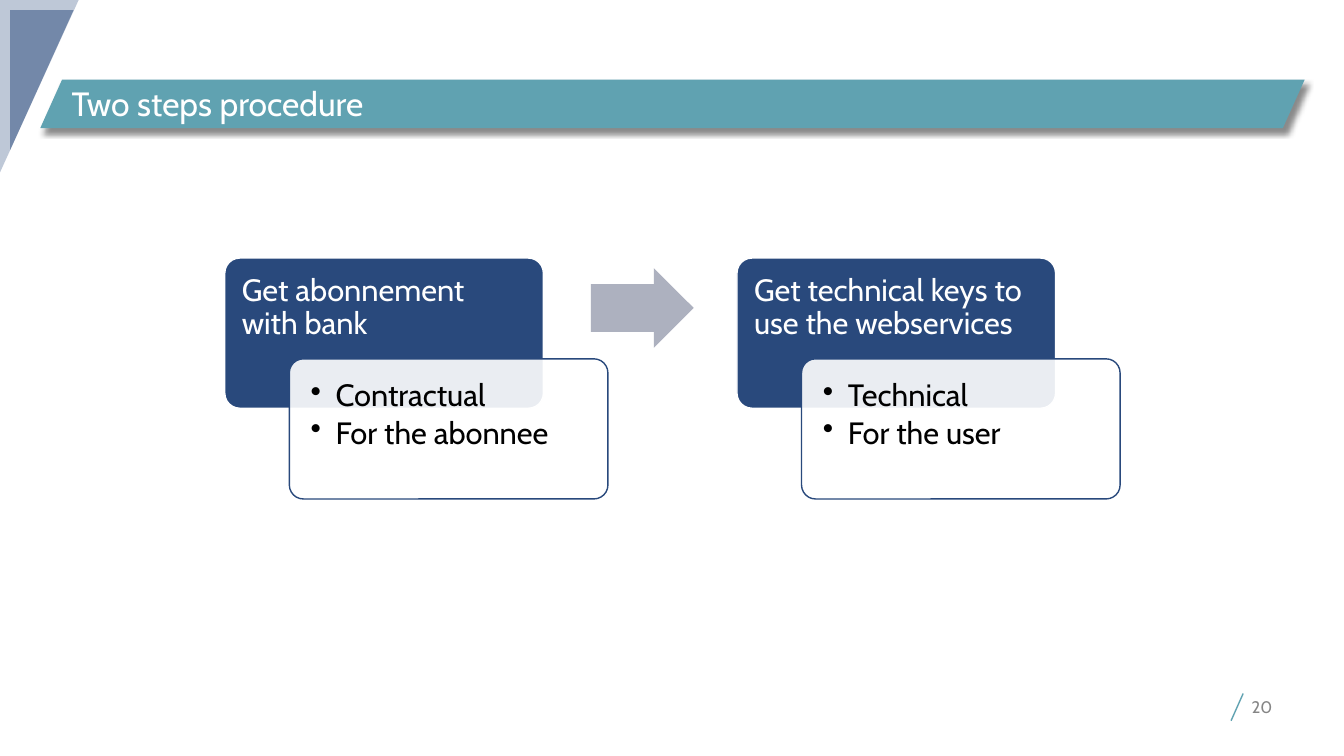
"""Build the "Two steps procedure" slide."""
from dataclasses import dataclass

from lxml import etree
from pptx import Presentation
from pptx.dml.color import RGBColor
from pptx.enum import shapes as kinds, text as t
from pptx.oxml import ns
from pptx.util import Inches, Pt

NAVY = RGBColor(0x29, 0x49, 0x7C)
TEAL = RGBColor(0x60, 0xA2, 0xB1)
ARROW_GREY = RGBColor(0xAD, 0xB1, 0xBF)
NUMBER_GREY = RGBColor(0x85, 0x85, 0x85)
WHITE = RGBColor(0xFF, 0xFF, 0xFF)
BLACK = RGBColor(0, 0, 0)
FONT = "Cabin"
STEP_PITCH = 5.08


@dataclass(frozen=True)
class Step:
    heading: str
    details: tuple[str, ...]


@dataclass(frozen=True)
class CornerTriangle:
    origin: float
    width: float
    height: float
    opacity: int


STEPS = (
    Step("Get abonnement with bank", ("Contractual", "For the abonnee")),
    Step("Get technical keys to use the webservices", ("Technical", "For the user")),
)
CORNER = (CornerTriangle(0, 0.78, 1.71, 30), CornerTriangle(0.1, 0.63, 1.39, 50))


def add_child(parent, tag: str, **attributes: str):
    return etree.SubElement(parent, ns.qn(tag), attributes)


def paint(shape, fill: RGBColor, line: RGBColor | None = None, opacity: int = 100) -> None:
    shape.shadow.inherit = False
    shape.fill.solid()
    shape.fill.fore_color.rgb = fill
    if opacity < 100:
        colour = shape._element.spPr.find(ns.qn("a:solidFill"))[0]
        add_child(colour, "a:alpha", val=str(opacity * 1000))
    if line is None:
        shape.line.fill.background()
    else:
        shape.line.color.rgb = line
        shape.line.width = Pt(1)


def add_block(slide, kind, left: float, top: float, width: float, height: float,
              adjustments: tuple[float, ...], fill: RGBColor, **look):
    block = slide.shapes.add_shape(kind, Inches(left), Inches(top), Inches(width), Inches(height))
    for index, value in enumerate(adjustments):
        block.adjustments[index] = value
    paint(block, fill, **look)
    return block


def write(frame, lines: tuple[str, ...], *, size: float, colour: RGBColor,
          align=t.PP_ALIGN.LEFT, anchor=t.MSO_ANCHOR.TOP, inset: float = 0,
          spacing: float | None = None, after: float = 0, bullet: bool = False) -> None:
    frame.word_wrap = True
    frame.auto_size = t.MSO_AUTO_SIZE.NONE
    frame.vertical_anchor = anchor
    frame.margin_left = frame.margin_right = frame.margin_top = Inches(inset)
    frame.margin_bottom = Inches(inset / 2)
    for index, line in enumerate(lines):
        paragraph = frame.add_paragraph() if index else frame.paragraphs[0]
        paragraph.alignment = align
        paragraph.line_spacing = spacing
        paragraph.space_after = Pt(after)
        if bullet:
            properties = paragraph._p.get_or_add_pPr()
            properties.set("marL", str(Inches(0.25)))
            properties.set("indent", str(-Inches(0.25)))
            add_child(properties, "a:buChar", char="•")
        run = paragraph.add_run()
        run.text = line
        run.font.name = FONT
        run.font.size = Pt(size)
        run.font.color.rgb = colour


def add_text(slide, left: float, top: float, width: float, height: float,
             lines: tuple[str, ...], **style) -> None:
    box = slide.shapes.add_textbox(Inches(left), Inches(top), Inches(width), Inches(height))
    write(box.text_frame, lines, **style)


def add_corner(slide, triangle: CornerTriangle) -> None:
    start = triangle.origin
    outline = slide.shapes.build_freeform(Inches(start), Inches(start))
    outline.add_line_segments([(Inches(start + triangle.width), Inches(start)),
                               (Inches(start), Inches(start + triangle.height))])
    paint(outline.convert_to_shape(), NAVY, opacity=triangle.opacity)


def add_title(slide, wording: str) -> None:
    band = add_block(slide, kinds.MSO_SHAPE.PARALLELOGRAM, 0.4, 0.79, 12.54, 0.48, (0.45,), TEAL)
    effects = band._element.spPr.find(ns.qn("a:effectLst"))
    shadow = add_child(effects, "a:outerShdw", blurRad=str(Pt(4)), dist=str(Pt(4)),
                       dir="3600000", algn="tl", rotWithShape="0")
    add_child(add_child(shadow, "a:srgbClr", val="000000"), "a:alpha", val="45000")
    title = slide.shapes.title
    title.left, title.top = Inches(0.71), Inches(0.83)
    title.width, title.height = Inches(11.92), Inches(0.38)
    write(title.text_frame, (wording,), size=24, colour=WHITE, anchor=t.MSO_ANCHOR.MIDDLE)
    band._element.addnext(title._element)


def add_step(slide, step: Step, left: float) -> None:
    rounded = kinds.MSO_SHAPE.ROUNDED_RECTANGLE
    add_block(slide, rounded, left, 2.56, 3.16, 1.49, (0.1,), NAVY, line=WHITE)
    add_text(slide, left, 2.56, 3.16, 1, (step.heading,),
             size=22, colour=WHITE, inset=0.17, spacing=0.9)
    add_block(slide, rounded, left + 0.64, 3.56, 3.16, 1.39, (0.1,), WHITE, line=NAVY, opacity=90)
    add_text(slide, left + 0.68, 3.6, 3.08, 1.3, step.details,
             size=22, colour=BLACK, inset=0.17, spacing=0.9, after=3.3, bullet=True)


def add_page_number(slide, number: str) -> None:
    slash = slide.shapes.add_connector(kinds.MSO_CONNECTOR.STRAIGHT, Inches(12.33), Inches(6.88),
                                       Inches(12.21), Inches(7.15))
    slash.line.color.rgb = TEAL
    slash.line.width = Pt(1)
    add_child(slash._element.spPr, "a:effectLst")
    add_text(slide, 12.33, 6.92, 0.29, 0.18, (number,), size=12, colour=NUMBER_GREY,
             align=t.PP_ALIGN.RIGHT, anchor=t.MSO_ANCHOR.MIDDLE)


def main() -> None:
    deck = Presentation()
    deck.slide_width, deck.slide_height = Inches(13.33), Inches(7.5)
    slide = deck.slides.add_slide(deck.slide_layouts[5])
    for triangle in CORNER:
        add_corner(slide, triangle)
    add_title(slide, "Two steps procedure")
    for index, step in enumerate(STEPS):
        add_step(slide, step, 2.23 + index * STEP_PITCH)
    add_block(slide, kinds.MSO_SHAPE.RIGHT_ARROW, 5.86, 2.66, 1.02, 0.79, (0.6, 0.5), ARROW_GREY)
    add_page_number(slide, "20")
    deck.save("out.pptx")


if __name__ == "__main__":
    main()
